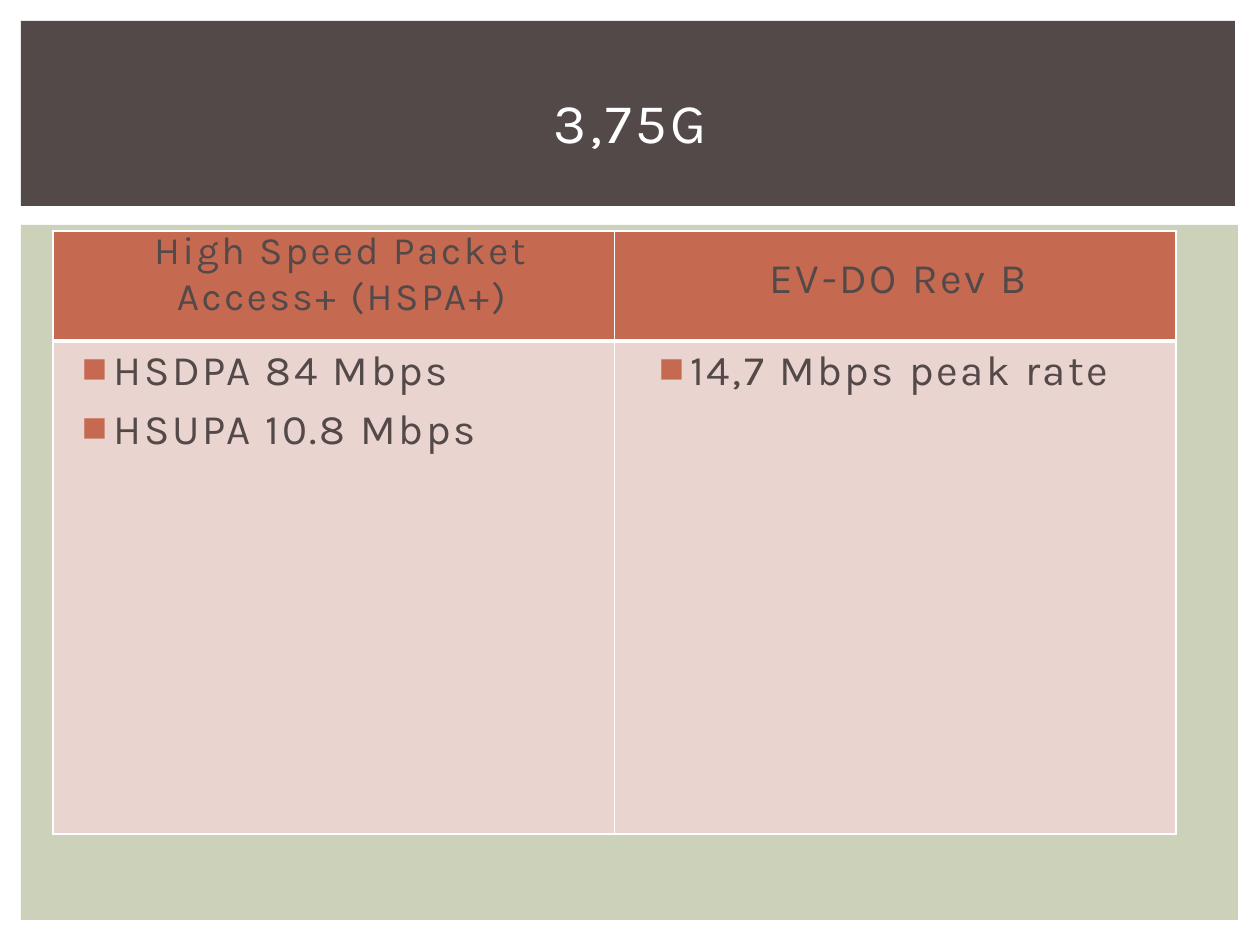
from dataclasses import dataclass

import pptx
import pptx.dml.color
import pptx.enum.shapes
import pptx.enum.text
import pptx.oxml
import pptx.oxml.ns
import pptx.util

PX = pptx.util.Inches(1) / 126
COMPARISON_LAYOUT = 4
ALIGN = pptx.enum.text.PP_ALIGN
ANCHOR = pptx.enum.text.MSO_ANCHOR


@dataclass(frozen=True)
class Theme:
    font: str = "Karla"
    bullet_font: str = "Arial"
    dark: str = "534949"
    sage: str = "CCD1B9"
    rust: str = "C66951"
    blush: str = "EAD4D0"
    white: str = "FFFFFF"
    title_size: float = 32
    text_size: float = 24
    long_heading_size: float = 22.2


THEME = Theme()


def px(length):
    return pptx.util.Emu(round(length * PX))


def rgb(colour):
    return pptx.dml.color.RGBColor.from_string(colour)


def xml(markup):
    namespace = pptx.oxml.ns.nsdecls("a")
    return pptx.oxml.parse_xml(markup.replace(" ", f" {namespace} ", 1))


def add_panel(slide, box, colour):
    panel = slide.shapes.add_shape(
        pptx.enum.shapes.MSO_SHAPE.RECTANGLE, *map(px, box))
    panel.shadow.inherit = False
    panel.fill.solid()
    panel.fill.fore_color.rgb = rgb(colour)
    panel.line.fill.background()


def style_cell(cell, fill, bottom_width):
    cell.fill.solid()
    cell.fill.fore_color.rgb = rgb(fill)
    widths = {"lnL": 1, "lnR": 1, "lnT": 1, "lnB": bottom_width}
    properties = cell._tc.get_or_add_tcPr()
    for position, (side, width) in enumerate(widths.items()):
        properties.insert(position, xml(
            f'<a:{side} w="{pptx.util.Pt(width)}"><a:solidFill>'
            f'<a:srgbClr val="{THEME.white}"/></a:solidFill></a:{side}>'))


def add_comparison_table(slide, box, heading_height):
    height = box[3]
    table = slide.shapes.add_table(2, 2, *map(px, box)).table
    rows = [(heading_height, THEME.rust, 3),
            (height - heading_height, THEME.blush, 1)]
    for row, (row_height, fill, bottom_width) in zip(table.rows, rows):
        row.height = px(row_height)
        for cell in row.cells:
            style_cell(cell, fill, bottom_width)


def add_bullet(paragraph):
    properties = paragraph._p.get_or_add_pPr()
    properties.set("marL", str(pptx.util.Inches(0.3)))
    properties.set("indent", str(pptx.util.Inches(-0.25)))
    for markup in (f'<a:buClr ><a:srgbClr val="{THEME.rust}"/></a:buClr>',
                   f'<a:buFont typeface="{THEME.bullet_font}"/>',
                   '<a:buChar char="■"/>'):
        properties.append(xml(markup))


def fill_placeholder(placeholder, box, lines, size, colour=THEME.dark,
                     align=ALIGN.CENTER, anchor=ANCHOR.BOTTOM,
                     spacing=1.5, space_before=0.2, bulleted=False):
    """Place a placeholder in front of the panels and write its lines."""
    placeholder.left, placeholder.top, placeholder.width, placeholder.height = map(px, box)
    tree = placeholder._element.getparent()
    tree.append(placeholder._element)
    frame = placeholder.text_frame
    frame.word_wrap = True
    frame.auto_size = pptx.enum.text.MSO_AUTO_SIZE.NONE
    frame.vertical_anchor = anchor
    for number, line in enumerate(lines):
        paragraph = frame.add_paragraph() if number else frame.paragraphs[0]
        paragraph.alignment = align
        paragraph.space_before = pptx.util.Pt(size * space_before)
        if bulleted:
            add_bullet(paragraph)
        run = paragraph.add_run()
        run.text = line
        run.font.name = THEME.font
        run.font.size = pptx.util.Pt(size)
        run.font.bold = False
        run.font.color.rgb = rgb(colour)
        run.font._element.set("spc", str(round(spacing * 100)))


def add_title(slide, box, title):
    fill_placeholder(slide.shapes.title, box, [title], THEME.title_size,
                     THEME.white, anchor=ANCHOR.MIDDLE, spacing=2, space_before=0)


def add_technology(heading, heading_box, heading_size, name, rates, rates_box, speeds):
    fill_placeholder(heading, heading_box, [name], heading_size)
    fill_placeholder(rates, rates_box, speeds, THEME.text_size,
                     align=ALIGN.LEFT, anchor=ANCHOR.TOP, bulleted=True)


def build_comparison_slide(presentation):
    slide = presentation.slides.add_slide(presentation.slide_layouts[COMPARISON_LAYOUT])
    add_panel(slide, (21, 225, 1217, 695), THEME.sage)
    add_panel(slide, (21, 21, 1214, 185), THEME.dark)
    add_comparison_table(slide, (53, 231, 1123, 603), heading_height=110)
    parts = slide.placeholders
    add_technology(parts[1], (63, 237, 557, 88), THEME.long_heading_size,
                   "High Speed Packet Access+ (HSPA+)",
                   parts[2], (63, 337, 557, 508),
                   ["HSDPA 84 Mbps", "HSUPA 10.8 Mbps"])
    add_technology(parts[3], (620, 220, 557, 88), THEME.text_size,
                   "EV-DO Rev B",
                   parts[4], (640, 337, 557, 508),
                   ["14,7 Mbps peak rate"])
    add_title(slide, (53, 49, 1155, 145), "3,75G")


def main():
    presentation = pptx.Presentation()
    presentation.slide_width = px(1260)
    presentation.slide_height = px(945)
    build_comparison_slide(presentation)
    presentation.save("out.pptx")


if __name__ == "__main__":
    main()
